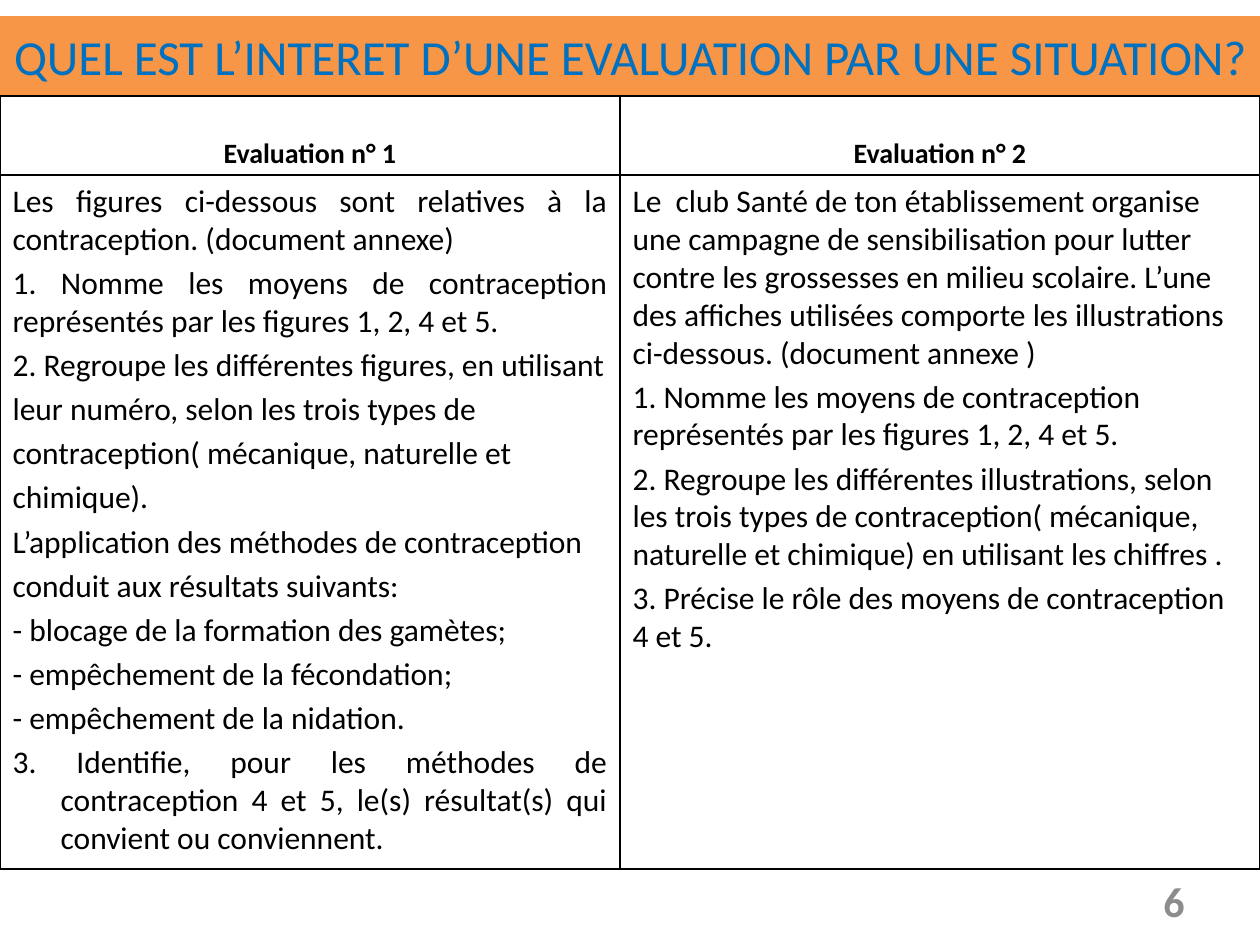
from dataclasses import dataclass

from pptx import Presentation
from pptx.dml.color import RGBColor
from pptx.enum import text
from pptx.oxml.ns import qn
from pptx.util import Emu, Pt

PX = 914400 / 126
ORANGE = RGBColor(0xF7, 0x96, 0x46)
BLUE = RGBColor(0x00, 0x70, 0xC0)
BLACK = RGBColor(0x00, 0x00, 0x00)
GREY = RGBColor(0x8C, 0x8C, 0x8C)
ALIGN = text.PP_ALIGN
ANCHOR = text.MSO_ANCHOR
HANGING = 48


@dataclass(frozen=True)
class Box:
    left: int
    top: int
    width: int
    height: int


@dataclass(frozen=True)
class Style:
    size: int
    color: RGBColor = BLACK
    bold: bool = False
    align: ALIGN = ALIGN.LEFT
    anchor: ANCHOR = ANCHOR.TOP


@dataclass(frozen=True)
class Line:
    words: str
    hanging: int = 0


@dataclass(frozen=True)
class Evaluation:
    heading: str
    left: int
    width: int
    align: ALIGN
    lines: list[Line]


def px(length: int) -> Emu:
    return Emu(round(length * PX))


def place(shape, box: Box) -> None:
    shape.left, shape.top = px(box.left), px(box.top)
    shape.width, shape.height = px(box.width), px(box.height)


def outline(shape) -> None:
    shape.line.color.rgb = BLACK
    shape.line.width = Pt(0.75)


def write(shape, lines: list[Line], style: Style) -> None:
    frame = shape.text_frame
    frame.word_wrap = True
    frame.auto_size = text.MSO_AUTO_SIZE.NONE
    frame.vertical_anchor = style.anchor
    frame.text = "\n".join(line.words for line in lines)
    for paragraph, line in zip(frame.paragraphs, lines):
        paragraph.alignment = style.align
        paragraph.font.name = "Calibri"
        paragraph.font.size = Pt(style.size)
        paragraph.font.bold = style.bold
        paragraph.font.color.rgb = style.color
        properties = paragraph._p.get_or_add_pPr()
        properties.set("marL", str(px(line.hanging)))
        properties.set("indent", str(-px(line.hanging)))
        properties.insert_element_before(
            properties.makeelement(qn("a:buNone"), {}), "a:tabLst", "a:defRPr", "a:extLst"
        )


def draw_evaluation(heading, statement, evaluation: Evaluation) -> None:
    place(heading, Box(evaluation.left, 96, evaluation.width, 79))
    place(statement, Box(evaluation.left, 175, evaluation.width, 694))
    outline(heading)
    outline(statement)
    heading_style = Style(16, bold=True, align=ALIGN.CENTER, anchor=ANCHOR.BOTTOM)
    write(heading, [Line(evaluation.heading)], heading_style)
    write(statement, evaluation.lines, Style(18, align=evaluation.align))


EVALUATIONS = [
    Evaluation("Evaluation n° 1", 0, 620, ALIGN.JUSTIFY, [
        Line("Les figures ci-dessous sont relatives à la contraception. (document annexe)"),
        Line("1. Nomme les moyens de contraception représentés par les figures 1, 2, 4 et 5."),
        Line("2. Regroupe les différentes figures, en utilisant", HANGING),
        Line("leur numéro, selon les trois types de", HANGING),
        Line("contraception( mécanique, naturelle et", HANGING),
        Line("chimique).", HANGING),
        Line("L’application des méthodes de contraception", HANGING),
        Line("conduit aux résultats suivants:", HANGING),
        Line("- blocage de la formation des gamètes;", HANGING),
        Line("- empêchement de la fécondation;", HANGING),
        Line("- empêchement de la nidation.", HANGING),
        Line("3. Identifie, pour les méthodes de contraception 4 et 5, "
             "le(s) résultat(s) qui convient ou conviennent.", HANGING),
    ]),
    Evaluation("Evaluation n° 2", 620, 640, ALIGN.LEFT, [
        Line("Le  club Santé de ton établissement organise une campagne de "
             "sensibilisation pour lutter contre les grossesses en milieu scolaire. "
             "L’une des affiches utilisées comporte les illustrations ci-dessous. "
             "(document annexe )"),
        Line("1. Nomme les moyens de contraception représentés par les figures 1, 2, 4 et 5."),
        Line("2. Regroupe les différentes illustrations, selon les trois types de "
             "contraception( mécanique, naturelle et chimique) en utilisant les chiffres ."),
        Line("3. Précise le rôle des moyens de contraception 4 et 5."),
    ]),
]


def main() -> None:
    deck = Presentation()
    deck.slide_width, deck.slide_height = px(1260), px(945)
    slide = deck.slides.add_slide(deck.slide_layouts[4])
    question, *columns = slide.placeholders

    place(question, Box(0, 16, 1260, 80))
    question.fill.solid()
    question.fill.fore_color.rgb = ORANGE
    write(question, [Line("QUEL EST L’INTERET D’UNE EVALUATION PAR UNE SITUATION?")],
          Style(28, BLUE, align=ALIGN.CENTER, anchor=ANCHOR.MIDDLE))
    question.text_frame.word_wrap = False

    for heading, statement, evaluation in zip(columns[::2], columns[1::2], EVALUATIONS):
        draw_evaluation(heading, statement, evaluation)

    page_number = slide.shapes.add_textbox(px(1126), px(876), px(71), px(50))
    write(page_number, [Line("6")],
          Style(24, GREY, bold=True, align=ALIGN.RIGHT, anchor=ANCHOR.MIDDLE))
    deck.save("out.pptx")


if __name__ == "__main__":
    main()
